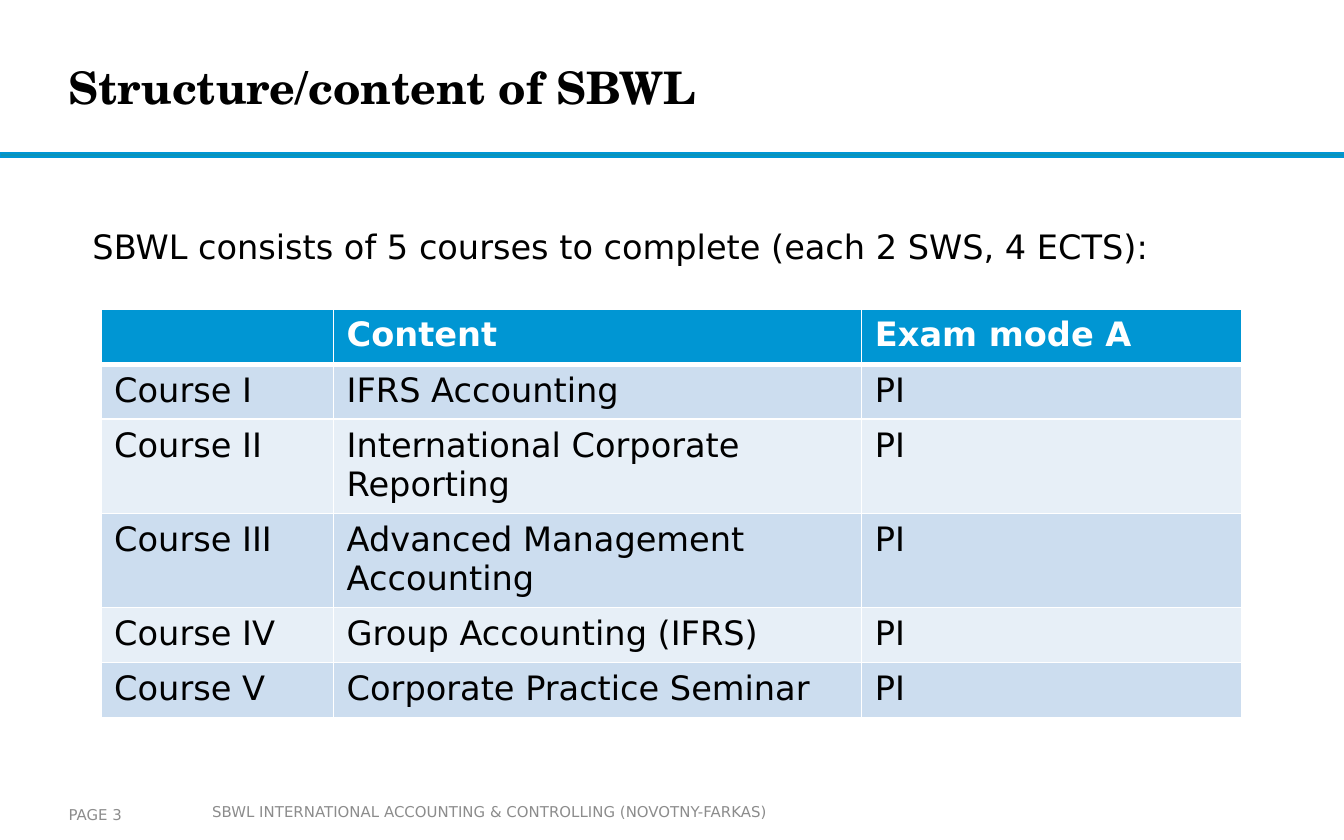
import pptx
import pptx.util
import pptx.dml.color
import pptx.enum.shapes
import pptx.enum.text
import pptx.oxml
import pptx.oxml.ns

PX = 9144  # EMU per px, 100 px to the inch
HEX = {"black": "000000", "white": "FFFFFF", "grey": "8C8C8C", "blue": "0096D3",
       "teal": "0C94B7", "dark": "CCDDEF", "light": "E7EFF7"}
SANS, SERIF = "DejaVu Sans", "TeX Gyre Schola"
MID = pptx.enum.text.MSO_ANCHOR.MIDDLE
TOP = pptx.enum.text.MSO_ANCHOR.TOP
LEFT = pptx.enum.text.PP_ALIGN.LEFT

COLS = [173, 393, 283]
ROWS = [
    ["", "Content", "Exam mode A"],
    ["Course I", "IFRS Accounting", "PI"],
    ["Course II", "International Corporate Reporting", "PI"],
    ["Course III", "Advanced Management Accounting", "PI"],
    ["Course IV", "Group Accounting (IFRS)", "PI"],
    ["Course V", "Corporate Practice Seminar", "PI"],
]


def emu(*vals):
    return [pptx.util.Emu(val * PX) for val in vals]


def tint(name):
    return pptx.dml.color.RGBColor.from_string(HEX[name])


def write(frame, text, size=18, face=SANS, color="black", bold=False,
          anchor=TOP, pad=(10, 5)):
    frame.word_wrap = True
    frame.vertical_anchor = anchor
    frame.margin_left = frame.margin_right = emu(pad[0])[0]
    frame.margin_top = frame.margin_bottom = emu(pad[1])[0]
    para = frame.paragraphs[0]
    para.text = text
    para.alignment = LEFT
    for font in [para.font] + [run.font for run in para.runs]:
        font.size, font.name, font.bold = pptx.util.Pt(size), face, bold
        font.color.rgb = tint(color)


def label(slide, box, text, **look):
    write(slide.shapes.add_textbox(*emu(*box)).text_frame, text, **look)


def edge(cell, side, width):
    cell._tc.get_or_add_tcPr().append(pptx.oxml.parse_xml(
        f'<a:{side} {pptx.oxml.ns.nsdecls("a")} w="{pptx.util.Pt(width)}"><a:solidFill>'
        f'<a:srgbClr val="{HEX["white"]}"/></a:solidFill></a:{side}>'))


def head(slide, box):
    left, top, wide, high = box
    # Rule under the title
    bar = slide.shapes.add_shape(pptx.enum.shapes.MSO_SHAPE.RECTANGLE,
                                 *emu(left, top + high, wide, 3))
    bar.shadow.inherit = False
    bar.fill.solid()
    bar.fill.fore_color.rgb = tint("teal")
    bar.line.color.rgb = tint("blue")
    bar.line.width = pptx.util.Pt(1)
    # Title
    title = slide.shapes.title
    title.left, title.top, title.width, title.height = emu(left + 51, top + 15, 748, high - 15)
    write(title.text_frame, "Structure/content of SBWL", size=24, face=SERIF,
          bold=True, anchor=MID, pad=(0, 0))


def grid(slide, box):
    table = slide.shapes.add_table(len(ROWS), len(COLS), *emu(*box)).table
    for col, wide in zip(table.columns, COLS):
        col.width = emu(wide)[0]
    for i, texts in enumerate(ROWS):
        table.rows[i].height = emu(41)[0]
        fill = "blue" if i == 0 else "dark" if i % 2 else "light"
        for j, text in enumerate(texts):
            cell = table.cell(i, j)
            # Borders come before the fill in the cell properties
            for side in ("lnL", "lnR", "lnT", "lnB"):
                thick = (i, side) in ((0, "lnB"), (1, "lnT"))
                edge(cell, side, 3 if thick else 1)
            cell.fill.solid()
            cell.fill.fore_color.rgb = tint(fill)
            write(cell.text_frame, text, bold=i == 0,
                  color="black" if i else "white")


def body(slide, box):
    left, top, wide, high = box
    label(slide, (left, top, wide, 40),
          "SBWL consists of 5 courses to complete (each 2 SWS, 4 ECTS):")
    grid(slide, (left + 16, top + 67, sum(COLS), high - 67))


def foot(slide, box):
    left, top, wide, high = box
    look = dict(size=8, color="grey", anchor=MID)
    label(slide, (left, top + 5, 98, high - 5), "PAGE 3", pad=(0, 5), **look)
    label(slide, (left + 97, top, wide - 97, high),
          "SBWL INTERNATIONAL ACCOUNTING & CONTROLLING (NOVOTNY-FARKAS)", **look)


def main():
    deck = pptx.Presentation()
    deck.slide_width, deck.slide_height = emu(1000, 625)
    slide = deck.slides.add_slide(deck.slide_layouts[5])
    head(slide, (0, 0, 1000, 114))
    body(slide, (59, 163, 843, 313))
    foot(slide, (51, 587, 740, 33))
    deck.save("out.pptx")


if __name__ == "__main__":
    main()
